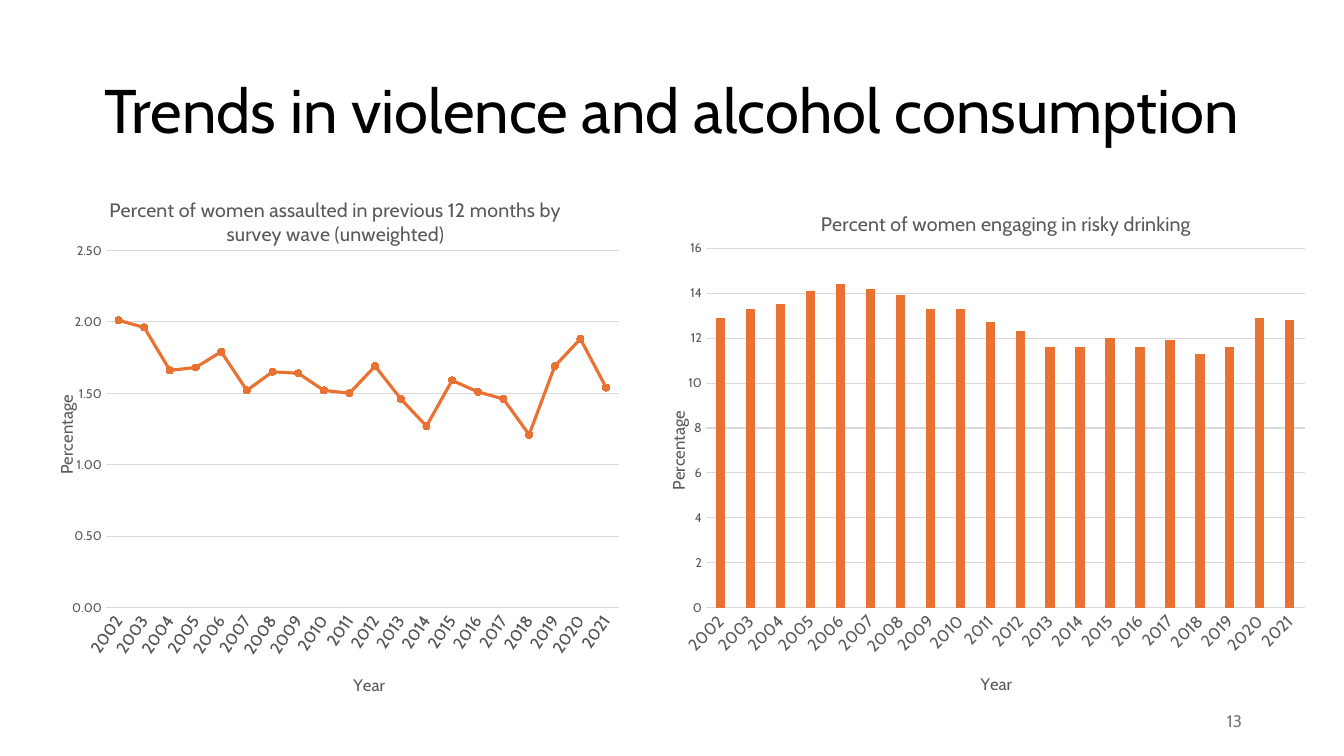
from dataclasses import dataclass

from lxml import etree
from pptx import Presentation
from pptx.chart.data import CategoryChartData
from pptx.dml.color import RGBColor
from pptx.enum.chart import XL_CHART_TYPE, XL_MARKER_STYLE, XL_TICK_MARK
from pptx.enum.text import MSO_ANCHOR, PP_ALIGN
from pptx.oxml.ns import qn
from pptx.util import Cm, Pt

COLUMNS = XL_CHART_TYPE.COLUMN_CLUSTERED
LINES = XL_CHART_TYPE.LINE_MARKERS
CIRCLE = XL_MARKER_STYLE.CIRCLE
NO_TICK = XL_TICK_MARK.NONE
MIDDLE = MSO_ANCHOR.MIDDLE
CENTER, RIGHT = PP_ALIGN.CENTER, PP_ALIGN.RIGHT
TITLE_ONLY = 5
DEGREE = 60000


@dataclass(frozen=True)
class Theme:
    font: str = "Cabin"
    ink: RGBColor = RGBColor(0x00, 0x00, 0x00)
    muted: RGBColor = RGBColor(0x59, 0x59, 0x59)
    page: RGBColor = RGBColor(0x79, 0x79, 0x79)
    grid: RGBColor = RGBColor(0xD9, 0xD9, 0xD9)
    accent: RGBColor = RGBColor(0xE9, 0x71, 0x32)
    title_size: int = 44
    chart_title_size: int = 14
    label_size: int = 12
    chart_size: int = 10
    value_size: int = 9


def set_layout(element, index, **fractions):
    """Place a chart part by fractions of the chart's size."""
    for old in element.findall(qn("c:layout")):
        element.remove(old)
    layout = etree.Element(qn("c:layout"))
    manual = etree.SubElement(layout, qn("c:manualLayout"))
    values = {"xMode": "edge", "yMode": "edge", **fractions}
    if "w" in fractions:
        values = {"layoutTarget": "inner", **values}
    for name, value in values.items():
        etree.SubElement(manual, qn(f"c:{name}")).set("val", str(value))
    element.insert(index, layout)


class SlideBuilder:
    def __init__(self, presentation, theme):
        self.theme = theme
        layout = presentation.slide_layouts[TITLE_ONLY]
        self.slide = presentation.slides.add_slide(layout)

    def style_font(self, font, size, color):
        values = {"name": self.theme.font, "size": Pt(size), "bold": False}
        for name, value in values.items():
            setattr(font, name, value)
        font.color.rgb = color

    def fill_text(self, shape, text, size, color, **paragraph_format):
        frame = shape.text_frame
        frame.word_wrap = True
        frame.vertical_anchor = MIDDLE
        frame.text = text
        paragraph = frame.paragraphs[0]
        for name, value in paragraph_format.items():
            setattr(paragraph, name, value)
        self.style_font(paragraph.runs[0].font, size, color)

    def title(self, text, box):
        shape = self.slide.shapes.title
        for name, value in zip(("left", "top", "width", "height"), box):
            setattr(shape, name, Cm(value))
        self.fill_text(shape, text, self.theme.title_size, self.theme.ink,
                       alignment=CENTER, line_spacing=0.9)

    def page_number(self, text, box):
        shape = self.slide.shapes.add_textbox(*map(Cm, box))
        self.fill_text(shape, text, self.theme.label_size, self.theme.page, alignment=RIGHT)

    def chart_text(self, title, text, size, position, rotation=0):
        frame = title.text_frame
        frame.text = text
        self.style_font(frame.paragraphs[0].runs[0].font, size, self.theme.muted)
        for body in title._element.xpath(".//a:bodyPr"):
            body.set("rot", str(rotation * DEGREE))
            body.set("vert", "horz")
        set_layout(title._element, 1, x=position[0], y=position[1])

    def axis(self, axis, text, size, position, rotation=0):
        axis.major_tick_mark = axis.minor_tick_mark = NO_TICK
        self.style_font(axis.tick_labels.font, size, self.theme.muted)
        self.chart_text(axis.axis_title, text, self.theme.label_size, position, rotation)

    def chart(self, kind, box, title, years, values, scale, number_format,
              label_angle, plot_area, positions):
        theme = self.theme
        data = CategoryChartData()
        data.categories = years
        data.add_series("Series 1", values)
        chart = self.slide.shapes.add_chart(kind, *map(Cm, box), data).chart
        self.style_font(chart.font, theme.chart_size, theme.ink)
        chart.has_legend = False
        chart.has_title = True
        self.chart_text(chart.chart_title, title, theme.chart_title_size, positions["title"])
        set_layout(chart._chartSpace.chart.plotArea, 0, **dict(zip("xywh", plot_area)))

        # Axes
        category, value = chart.category_axis, chart.value_axis
        self.axis(category, "Year", theme.label_size, positions["year"])
        self.axis(value, "Percentage", theme.value_size, positions["percentage"], -90)
        for body in category._element.xpath("c:txPr/a:bodyPr"):
            body.set("rot", str(label_angle * DEGREE))
        value.minimum_scale = 0
        value.maximum_scale, value.major_unit = scale
        value.tick_labels.number_format = number_format
        value.tick_labels.number_format_is_linked = False
        value.has_major_gridlines = True
        for line in (category.format.line, value.major_gridlines.format.line):
            line.color.rgb = theme.grid
            line.width = Pt(0.75)
        value.format.line.fill.background()

        # Series
        plot = chart.plots[0]
        plot.vary_by_categories = False
        series = plot.series[0]
        if kind == COLUMNS:
            plot.gap_width, plot.overlap = 219, -27
            fills = [series.format.fill]
        else:
            series.smooth = False
            series.format.line.color.rgb = theme.accent
            series.format.line.width = Pt(2.25)
            series.marker.style, series.marker.size = CIRCLE, 5
            series.marker.format.line.color.rgb = theme.accent
            fills = [series.marker.format.fill]
        for fill in fills:
            fill.solid()
            fill.fore_color.rgb = theme.accent


def main():
    presentation = Presentation()
    presentation.slide_width, presentation.slide_height = Cm(33.87), Cm(19.05)
    builder = SlideBuilder(presentation, Theme())
    years = [str(year) for year in range(2002, 2022)]

    # Heading and page number
    builder.title("Trends in violence and alcohol consumption", (2.33, 1.02, 29.21, 3.68))
    builder.page_number("13", (23.93, 17.65, 7.62, 1.02))

    # Risky drinking
    builder.chart(
        COLUMNS, (16.56, 4.7, 17.55, 12.95),
        "Percent of women engaging in risky drinking", years,
        (12.9, 13.3, 13.5, 14.1, 14.4, 14.2, 13.9, 13.3, 13.3, 12.7,
         12.3, 11.6, 11.6, 12, 11.6, 11.9, 11.3, 11.6, 12.9, 12.8),
        scale=(16, 2), number_format="General", label_angle=-45,
        plot_area=(0.07, 0.12, 0.86, 0.7),
        positions={"title": (0.23, 0.04), "year": (0.46, 0.94), "percentage": (0.01, 0.43)})

    # Assaults
    builder.chart(
        LINES, (0.86, 4.32, 15.04, 13.34),
        "Percent of women assaulted in previous 12 months by survey wave (unweighted)", years,
        (2.01, 1.96, 1.66, 1.68, 1.79, 1.52, 1.65, 1.64, 1.52, 1.5,
         1.69, 1.46, 1.27, 1.59, 1.51, 1.46, 1.21, 1.69, 1.88, 1.54),
        scale=(2.5, 0.5), number_format="0.00", label_angle=-55,
        plot_area=(0.12, 0.15, 0.86, 0.68),
        positions={"title": (0.12, 0.04), "year": (0.53, 0.95), "percentage": (0.03, 0.42)})

    presentation.save("out.pptx")


if __name__ == "__main__":
    main()
